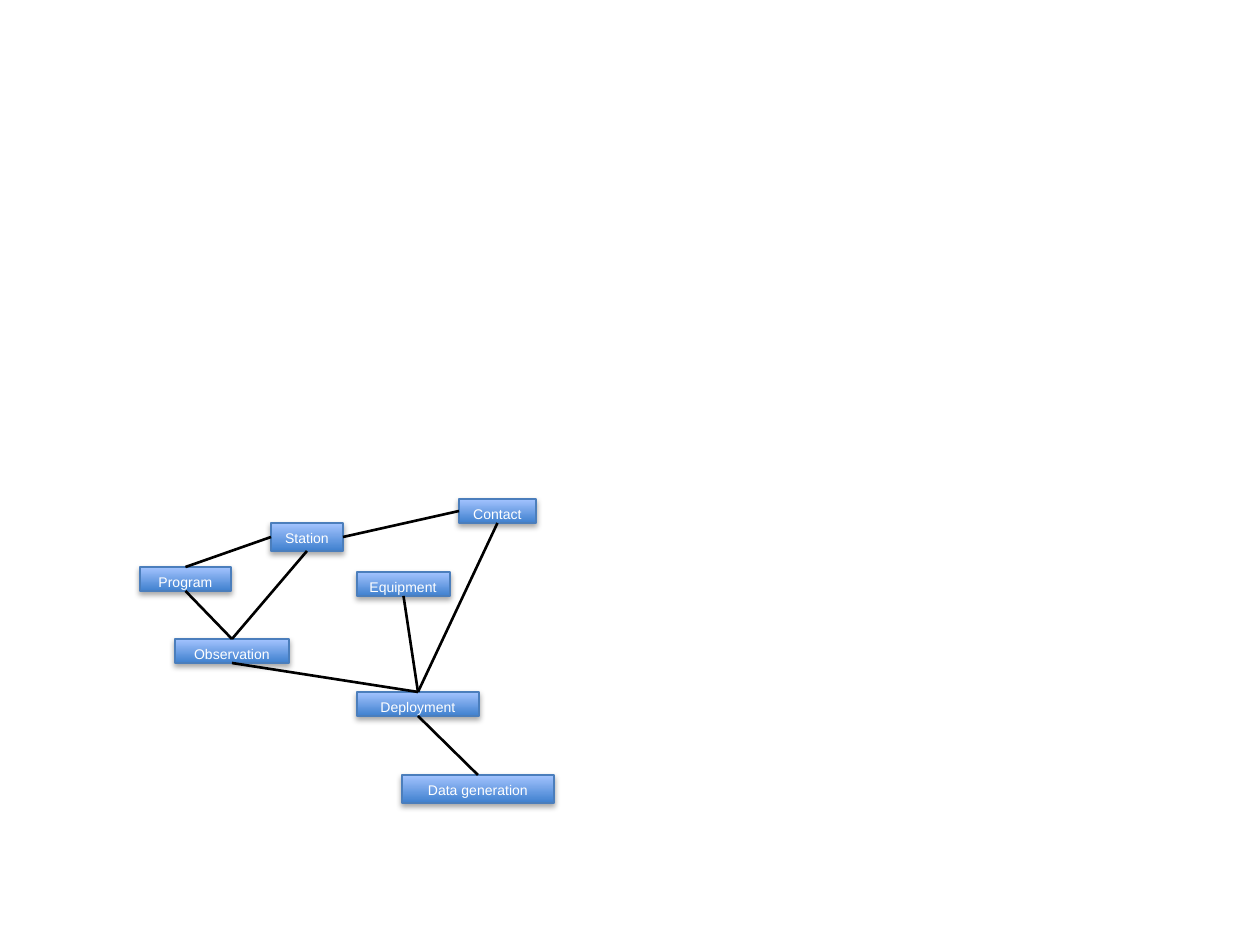
from lxml.etree import SubElement
from pptx import Presentation
from pptx.dml.color import RGBColor
from pptx.enum.shapes import MSO_CONNECTOR, MSO_SHAPE
from pptx.enum.text import MSO_ANCHOR, PP_ALIGN
from pptx.oxml.ns import qn
from pptx.util import Inches, Pt

PX = Inches(1) / 126
TOP, LEFT, BOTTOM, RIGHT = range(4)

ENTITIES = {
    "Station": (271, 523, 72, 28),
    "Equipment": (357, 572, 93, 24),
    "Deployment": (357, 692, 122, 24),
    "Data generation": (402, 775, 152, 28),
    "Observation": (175, 639, 114, 24),
    "Contact": (459, 499, 77, 24),
    "Program": (140, 567, 91, 24),
}

RELATIONS = [
    ("Station", BOTTOM, "Observation", TOP),
    ("Observation", BOTTOM, "Deployment", TOP),
    ("Deployment", BOTTOM, "Data generation", TOP),
    ("Deployment", TOP, "Equipment", BOTTOM),
    ("Station", RIGHT, "Contact", LEFT),
    ("Deployment", TOP, "Contact", BOTTOM),
    ("Program", TOP, "Station", LEFT),
    ("Program", BOTTOM, "Observation", TOP),
]


def px(length):
    """Turn pixels into EMU."""
    return round(length * PX)


def color(hex_value):
    """Return the colour for a hex string."""
    return RGBColor.from_string(hex_value)


def add_shadow(shape):
    """Give a shape a soft shadow straight below it."""
    shape.shadow.inherit = False
    effects = shape._element.spPr.find(qn("a:effectLst"))
    shadow = SubElement(effects, qn("a:outerShdw"), blurRad="40000",
                        dist="23000", dir="5400000", rotWithShape="0")
    black = SubElement(shadow, qn("a:srgbClr"), val="000000")
    SubElement(black, qn("a:alpha"), val="35000")


def add_entity(slide, label, bounds):
    """Add a labelled gradient box."""
    entity = slide.shapes.add_shape(MSO_SHAPE.RECTANGLE, *map(px, bounds))
    entity.fill.gradient()
    entity.fill.gradient_angle = 90
    for stop, shade in zip(entity.fill.gradient_stops, ("3F80CE", "A4C4FF")):
        stop.color.rgb = color(shade)
    entity.line.color.rgb = color("4B7EBC")
    entity.line.width = Pt(0.75)
    add_shadow(entity)
    frame = entity.text_frame
    frame.text = label
    frame.word_wrap = True
    frame.vertical_anchor = MSO_ANCHOR.TOP
    paragraph = frame.paragraphs[0]
    paragraph.alignment = PP_ALIGN.CENTER
    font = paragraph.runs[0].font
    font.name = "Arial"
    font.size = Pt(8)
    font.color.rgb = color("FFFFFF")
    return entity


def add_relation(slide, start, start_side, end, end_side):
    """Join two entities with a plain black line."""
    relation = slide.shapes.add_connector(MSO_CONNECTOR.STRAIGHT, 0, 0, 0, 0)
    relation.begin_connect(start, start_side)
    relation.end_connect(end, end_side)
    relation.line.color.rgb = color("000000")
    relation.line.width = Pt(1.5)
    SubElement(relation._element.spPr, qn("a:effectLst"))
    return relation


def main():
    """Build the entity diagram and save it."""
    presentation = Presentation()
    presentation.slide_width = px(1260)
    presentation.slide_height = px(945)
    slide = presentation.slides.add_slide(presentation.slide_layouts[6])
    entities = {label: add_entity(slide, label, bounds)
                for label, bounds in ENTITIES.items()}
    entities["Equipment"].text_frame.paragraphs[0].alignment = PP_ALIGN.LEFT
    relations = [add_relation(slide, entities[start], start_side,
                              entities[end], end_side)
                 for start, start_side, end, end_side in RELATIONS]
    slide.shapes.add_group_shape([*entities.values(), *relations])
    presentation.save("out.pptx")


if __name__ == "__main__":
    main()
